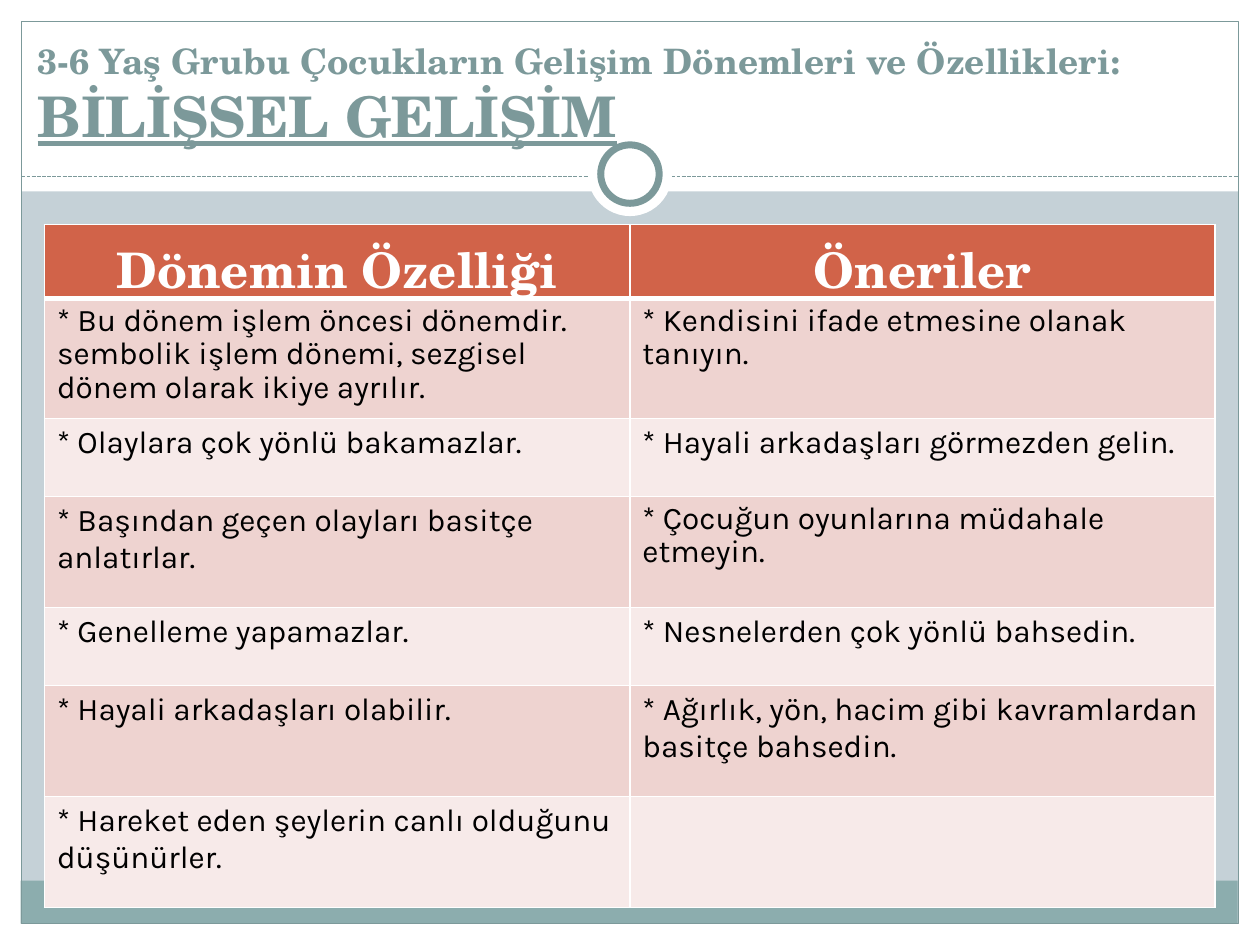
"""Build the slide on cognitive development at ages 3 to 6."""
import lxml.etree
import pptx
import pptx.dml.color
import pptx.enum.dml
import pptx.enum.shapes
import pptx.enum.text
import pptx.oxml.ns
import pptx.util

Pt = pptx.util.Pt
qn = pptx.oxml.ns.qn
SHAPES = pptx.enum.shapes.MSO_SHAPE
CENTER = pptx.enum.text.PP_ALIGN.CENTER

COLORS = {
    "backdrop": "C5D1D7",
    "white": "FFFFFF",
    "black": "000000",
    "band": "8CADAE",
    "accent": "7C999A",
    "header": "D16349",
    "odd": "EED3D0",
    "even": "F7EAE9",
}
HEADING_FONT = "TeX Gyre Schola"
BODY_FONT = "Karla"

WIDTH, HEIGHT, MARGIN = 720, 540, 12.24
INNER = WIDTH - 2 * MARGIN
RULE_TOP = 100.8
ROW_HEIGHTS = [42.5, 68.4, 44.6, 63.4, 44.6, 63.4, 63.4]
HEADERS = ["Dönemin Özelliği", "Öneriler"]
TIGHT = 0.9
ROWS = [
    [(["* Bu dönem işlem öncesi dönemdir.",
       "sembolik işlem dönemi, sezgisel",
       "dönem olarak ikiye ayrılır."], TIGHT),
     (["* Kendisini ifade etmesine olanak tanıyın."], TIGHT)],
    [(["* Olaylara çok yönlü bakamazlar."], None),
     (["* Hayali arkadaşları görmezden gelin."], None)],
    [(["* Başından geçen olayları basitçe anlatırlar."], None),
     (["* Çocuğun oyunlarına müdahale etmeyin."], TIGHT)],
    [(["* Genelleme yapamazlar."], None),
     (["* Nesnelerden çok yönlü bahsedin."], None)],
    [(["* Hayali arkadaşları olabilir."], None),
     (["* Ağırlık, yön, hacim gibi kavramlardan basitçe bahsedin."], None)],
    [(["* Hareket eden şeylerin canlı olduğunu düşünürler."], None),
     ([], None)],
]


def color(name):
    """Return the named colour."""
    return pptx.dml.color.RGBColor.from_string(COLORS[name])


def add_panel(page, kind, left, top, width, height, fill=None, line=None, weight=0.75):
    """Add a preset shape with optional fill and outline."""
    panel = page.shapes.add_shape(kind, Pt(left), Pt(top), Pt(width), Pt(height))
    panel.shadow.inherit = False
    if fill:
        panel.fill.solid()
        panel.fill.fore_color.rgb = color(fill)
    else:
        panel.fill.background()
    if line:
        panel.line.color.rgb = color(line)
        panel.line.width = Pt(weight)
    else:
        panel.line.fill.background()


def add_rule(page, left, right, top):
    """Add the dashed horizontal rule."""
    rule = page.shapes.add_connector(
        pptx.enum.shapes.MSO_CONNECTOR.STRAIGHT, Pt(left), Pt(top), Pt(right), Pt(top))
    rule.line.color.rgb = color("accent")
    rule.line.width = Pt(0.75)
    rule.line.dash_style = pptx.enum.dml.MSO_LINE.SQUARE_DOT
    properties = rule._element.find(qn("p:spPr"))
    lxml.etree.SubElement(properties, qn("a:effectLst"))


def add_span(para, text, font, size, shade, bold=False, underline=None):
    """Add one formatted run to a paragraph."""
    span = para.add_run()
    span.text = text
    span.font.name = font
    span.font.size = Pt(size)
    span.font.bold = bold
    span.font.underline = underline
    span.font.color.rgb = color(shade)


def add_title(page):
    """Add the two-line title, anchored to the bottom of its box."""
    box = page.shapes.add_textbox(Pt(14.4), Pt(3.6), Pt(705.6), Pt(85))
    frame = box.text_frame
    frame.word_wrap = True
    frame.vertical_anchor = pptx.enum.text.MSO_ANCHOR.BOTTOM
    para = frame.paragraphs[0]
    add_span(para, "3-6 Yaş Grubu Çocukların Gelişim Dönemleri ve Özellikleri:",
             HEADING_FONT, 20, "accent", bold=True)
    para.add_line_break()
    add_span(para, "BİLİŞSEL GELİŞİM", HEADING_FONT, 32, "accent", bold=True, underline=True)


def style_cell(cell, fill, bottom=1):
    """Give a cell white borders and a solid fill."""
    properties = cell._tc.get_or_add_tcPr()
    for side, weight in (("L", 1), ("R", 1), ("T", 1), ("B", bottom)):
        border = lxml.etree.SubElement(properties, qn(f"a:ln{side}"), w=str(Pt(weight)))
        solid = lxml.etree.SubElement(border, qn("a:solidFill"))
        lxml.etree.SubElement(solid, qn("a:srgbClr"), val=COLORS["white"])
    cell.fill.solid()
    cell.fill.fore_color.rgb = color(fill)


def add_traits_table(page):
    """Add the table of traits and suggestions."""
    table = page.shapes.add_table(
        len(ROW_HEIGHTS), len(HEADERS), Pt(25.4), Pt(128.2), Pt(669), Pt(sum(ROW_HEIGHTS))).table
    for row, height in zip(table.rows, ROW_HEIGHTS):
        row.height = Pt(height)
    for column, header in enumerate(HEADERS):
        cell = table.cell(0, column)
        style_cell(cell, "header", bottom=3)
        para = cell.text_frame.paragraphs[0]
        para.alignment = CENTER
        add_span(para, header, HEADING_FONT, 28, "white", bold=True)
    for number, entries in enumerate(ROWS, 1):
        for column, (lines, spacing) in enumerate(entries):
            cell = table.cell(number, column)
            style_cell(cell, "odd" if number % 2 else "even")
            frame = cell.text_frame
            for index, line in enumerate(lines):
                para = frame.add_paragraph() if index else frame.paragraphs[0]
                para.line_spacing = spacing
                add_span(para, line, BODY_FONT, 18, "black")


def add_frame(page):
    """Add the white margins, the bottom band, the outline and the ring."""
    for area in ((0, HEIGHT - MARGIN, WIDTH, MARGIN), (0, 0, WIDTH, 109.44),
                 (0, 0, MARGIN, HEIGHT), (WIDTH - MARGIN, 0, MARGIN, HEIGHT)):
        add_panel(page, SHAPES.RECTANGLE, *area, fill="white")
    add_panel(page, SHAPES.RECTANGLE, 11.75, 503.3, INNER, 24.48, fill="band")
    add_panel(page, SHAPES.RECTANGLE, MARGIN, MARGIN, INNER, HEIGHT - 2 * MARGIN, line="accent")
    add_rule(page, MARGIN, WIDTH - MARGIN, RULE_TOP)
    for size, line in ((48, None), (33.4, "accent")):
        add_panel(page, SHAPES.OVAL, (WIDTH - size) / 2, 99.5 - size / 2, size, size,
                  fill="white", line=line, weight=4)


def main():
    """Build and save the deck."""
    deck = pptx.Presentation()
    deck.slide_width, deck.slide_height = Pt(WIDTH), Pt(HEIGHT)
    page = deck.slides.add_slide(deck.slide_layouts[6])
    page.background.fill.solid()
    page.background.fill.fore_color.rgb = color("backdrop")
    add_frame(page)
    add_title(page)
    add_traits_table(page)
    deck.save("out.pptx")


if __name__ == "__main__":
    main()
